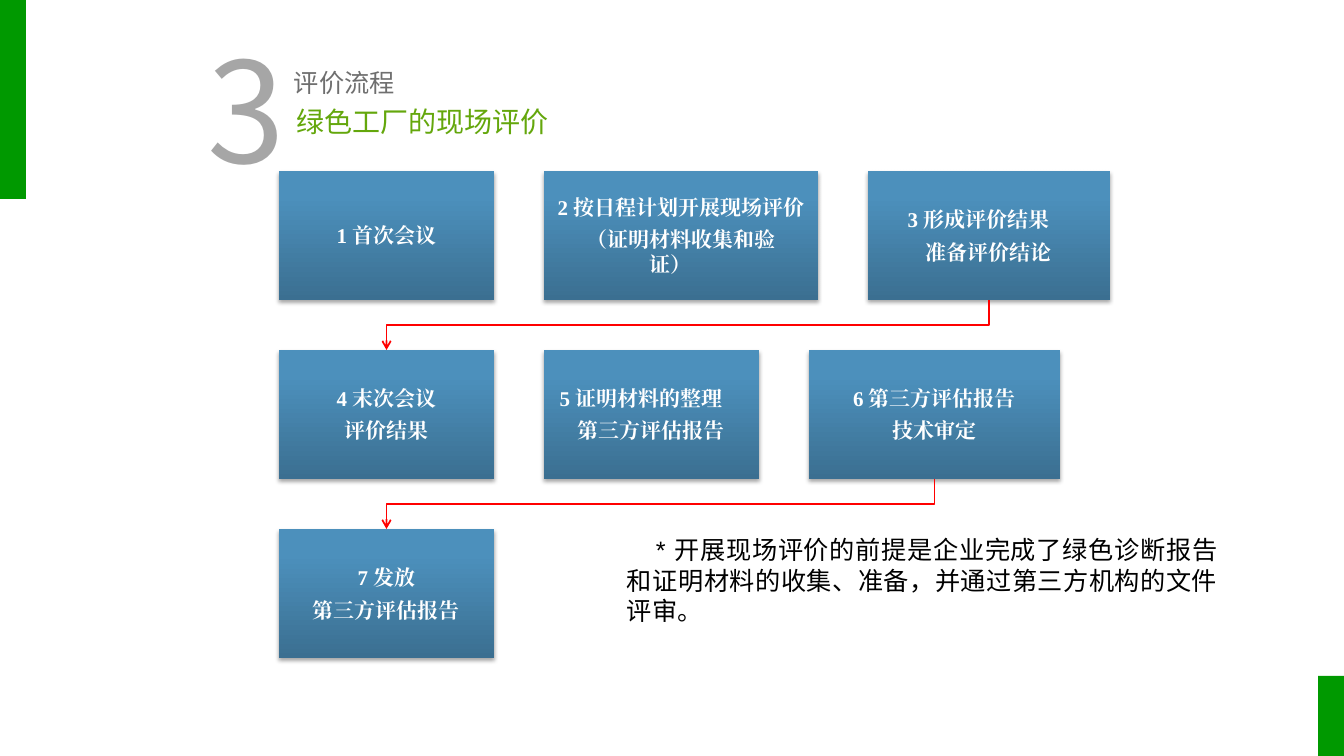
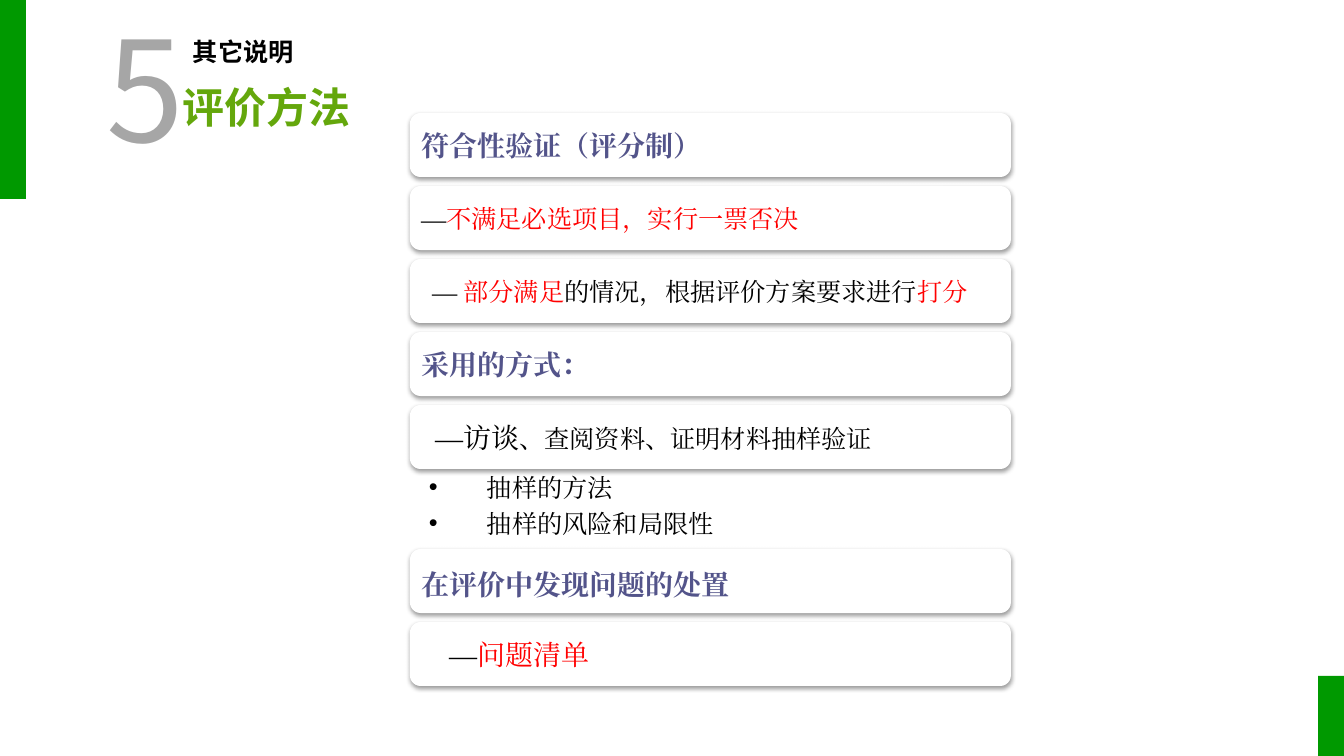
from itertools import count

from lxml.etree import SubElement
from pptx import Presentation
from pptx.dml.color import RGBColor
from pptx.enum.shapes import MSO_CONNECTOR, MSO_SHAPE
from pptx.enum.text import MSO_ANCHOR, MSO_AUTO_SIZE, PP_ALIGN
from pptx.oxml.ns import qn
from pptx.util import Pt

SCALE = 12192000 / 1344
COLORS = {
    "band": "009900", "title": "64A70C", "number": "A6A6A6", "caption": "6F6F6F",
    "black": "000000", "white": "FFFFFF", "red": "FF0000", "heading": "53548A",
    "step_dark": "3B6F91", "step_light": "4C90BC",
}
SANS, SERIF = "Noto Sans CJK SC", "Times New Roman"
STEP_TEXT = {"size": 15, "name": SERIF, "color": "white", "bold": True}
HEADING = {"size": 20, "name": SERIF, "color": "heading", "bold": True}
BODY = {"size": 18, "name": SERIF, "color": "black"}
BODY_RED = {**BODY, "color": "red"}
LARGE = {**BODY, "size": 20}
LARGE_RED = {**LARGE, "color": "red"}

STEP_ROWS = [
    [(215, ["1 首次会议"]),
     (274, ["2 按日程计划开展现场评价", "（证明材料收集和验证）　"]),
     (242, ["3 形成评价结果　", "准备评价结论"])],
    [(215, ["4 末次会议", "评价结果"]),
     (215, ["5 证明材料的整理　", "第三方评估报告"]),
     (251, ["6 第三方评估报告", "技术审定"])],
    [(215, ["7 发放", "第三方评估报告"])],
]
METHOD_CARDS = [
    ([("符合性验证（评分制）", HEADING)], {}),
    ([("—", BODY), ("不满足必选项目，实行一票否决", BODY_RED)], {}),
    ([("— ", BODY), ("部分满足", BODY_RED),
      ("的情况，根据评价方案要求进行", BODY), ("打分", BODY_RED)], {"margin": 11}),
    ([("采用的方式：", HEADING)], {}),
    ([("—访谈", LARGE), ("、查阅资料、证明材料抽样验证", BODY)], {"margin": 14}),
]
SAMPLING_POINTS = ["抽样的方法", "抽样的风险和局限性"]
PROBLEM_CARDS = [
    ([("在评价中发现问题的处置", HEADING)], {"line_spacing": 1.2}),
    ([("—", LARGE), ("问题清单", LARGE_RED)], {"margin": 28}),
]


def px(value):
    return round(value * SCALE)


def color(name):
    return RGBColor.from_string(COLORS[name])


def style_span(span, style):
    values = {**style, "size": Pt(style["size"])}
    span.font.color.rgb = color(values.pop("color"))
    for key, value in values.items():
        setattr(span.font, key, value)


def write_text(box, paragraphs, inset=(0, 0, 0, 0), anchor=MSO_ANCHOR.MIDDLE,
               wrap=True, bullet=None, margin=0, indent=0, **layout):
    frame = box.text_frame
    sides = zip(("left", "top", "right", "bottom"), inset)
    settings = {f"margin_{side}": px(value) for side, value in sides}
    settings.update(auto_size=MSO_AUTO_SIZE.NONE, word_wrap=wrap, vertical_anchor=anchor)
    for key, value in settings.items():
        setattr(frame, key, value)
    for number, spans in enumerate(paragraphs):
        para = frame.add_paragraph() if number else frame.paragraphs[0]
        properties = para._p.get_or_add_pPr()
        if margin or indent:
            properties.set("marL", str(px(margin)))
            properties.set("indent", str(px(indent)))
        if bullet:
            SubElement(properties, qn("a:buFont"), typeface="Arial")
            SubElement(properties, qn("a:buChar"), char=bullet)
        for key, value in {"alignment": PP_ALIGN.LEFT, **layout}.items():
            setattr(para, key, value)
        for text, style in spans:
            span = para.add_run()
            span.text = text
            style_span(span, style)
    for latin in list(box.element.iter(qn("a:latin"))):
        east_asian = SubElement(latin.getparent(), qn("a:ea"), typeface=latin.get("typeface"))
        latin.addnext(east_asian)


def add_text(page, area, paragraphs, **layout):
    box = page.shapes.add_textbox(*map(px, area))
    write_text(box, paragraphs, **layout)
    return box


def add_panel(page, preset, area):
    panel = page.shapes.add_shape(preset, *map(px, area))
    panel.shadow.inherit = False
    panel.line.fill.background()
    return panel


def add_shadow(panel, opacity, distance):
    effects = panel.element.spPr.find(qn("a:effectLst"))
    shadow = SubElement(effects, qn("a:outerShdw"), blurRad=str(Pt(3.1)),
                        dist=str(Pt(distance)), dir="5400000", rotWithShape="0")
    tone = SubElement(shadow, qn("a:srgbClr"), val=COLORS["black"])
    SubElement(tone, qn("a:alpha"), val=str(opacity * 1000))


def add_layout_bands(layout, page):
    identifiers = count(100)
    for area in ((1318, 676, 26, 80), (0, 0, 26, 199)):
        band = add_panel(page, MSO_SHAPE.RECTANGLE, area)
        band.fill.solid()
        band.fill.fore_color.rgb = color("band")
        band.element.nvSpPr.cNvPr.id = next(identifiers)
        layout.shapes.element.insert(2, band.element)


def add_heading(page, number, number_at, caption, caption_at, caption_style,
                title, title_area, title_style):
    left, top = number_at
    add_text(page, (left, top, 80, 179),
             [[(number, {"size": 100, "name": SANS, "color": "number"})]],
             inset=(10, 0, 0, 0), wrap=False)
    add_text(page, (*caption_at, 203, 40),
             [[(caption, {"size": 18, "name": SANS, **caption_style})]],
             inset=(10, 5, 10, 5))
    heading = page.shapes.title
    for key, value in zip(("left", "top", "width", "height"), title_area):
        setattr(heading, key, px(value))
    write_text(heading, [[(title, {"name": SANS, "color": "title", **title_style})]])


def add_step(page, area, lines):
    step = add_panel(page, MSO_SHAPE.RECTANGLE, area)
    step.fill.gradient()
    step.fill.gradient_angle = 90
    stops = (("step_dark", 0), ("step_light", 0.8))
    for stop, (name, position) in zip(step.fill.gradient_stops, stops):
        stop.color.rgb = color(name)
        stop.position = position
    add_shadow(step, 35, 1.8)
    write_text(step, [[(line, STEP_TEXT)] for line in lines], inset=(12,) * 4,
               alignment=PP_ALIGN.CENTER, space_after=Pt(5))
    return step


def add_return_arrow(page, start, end):
    start_x, start_y = start.left + start.width // 2, start.top + start.height
    end_x, end_y = end.left + end.width // 2, end.top
    arrow = page.shapes.add_connector(MSO_CONNECTOR.ELBOW, start_x, start_y, end_x, end_y)
    arrow.begin_connect(start, 2)
    arrow.end_connect(end, 0)
    run, drop = start_x - end_x, end_y - start_y
    frame = {"left": (start_x + end_x - drop) // 2, "top": (start_y + end_y - run) // 2,
             "width": drop, "height": run}
    for key, value in frame.items():
        setattr(arrow, key, value)
    properties = arrow.element.spPr
    transform = properties.find(qn("a:xfrm"))
    for flip in ("flipH", "flipV"):
        transform.attrib.pop(flip, None)
    transform.set("rot", "5400000")
    arrow.line.color.rgb = color("red")
    arrow.line.width = Pt(1.25)
    SubElement(properties.find(qn("a:ln")), qn("a:tailEnd"), type="arrow")
    SubElement(properties, qn("a:effectLst"))


def add_step_flow(page, left, top, height=129, gap=50):
    previous = None
    for number, row in enumerate(STEP_ROWS):
        step_left = left
        steps = []
        for width, lines in row:
            area = (step_left, top + number * (height + gap), width, height)
            steps.append(add_step(page, area, lines))
            step_left += width + gap
        if previous:
            add_return_arrow(page, previous, steps[0])
        previous = steps[-1]


def add_cards(page, left, top, width, cards, height=64, pitch=73):
    for number, (spans, layout) in enumerate(cards):
        area = (left, top + number * pitch, width, height)
        card = add_panel(page, MSO_SHAPE.ROUNDED_RECTANGLE, area)
        card.fill.solid()
        card.fill.fore_color.rgb = color("white")
        add_shadow(card, 38, 1.6)
        write_text(card, [spans], inset=(8,) * 4, **layout)


def build_process_page(page):
    add_heading(page, "3", (198, 18), "评价流程", (284, 62), {"color": "caption"},
                "绿色工厂的现场评价", (296, 101, 521, 40), {"size": 20})
    add_step_flow(page, 279, 171)
    note = "* 开展现场评价的前提是企业完成了绿色诊断报告和证明材料的收集、准备，并通过第三方机构的文件评审。"
    add_text(page, (617, 529, 611, 102),
             [[(note, {"size": 18, "name": "Arial", "color": "black"})]],
             inset=(10, 5, 10, 5), indent=29, alignment=PP_ALIGN.JUSTIFY)


def build_method_page(page):
    add_heading(page, "5", (97, -3), "其它说明", (183, 31), {"color": "black", "bold": True},
                "评价方法", (183, 82, 191, 50), {"size": 30, "bold": True})
    left, width = 410, 601
    add_cards(page, left, 113, width, METHOD_CARDS)
    add_text(page, (left, 469, width, 80), [[(point, BODY)] for point in SAMPLING_POINTS],
             inset=(19, 3, 14, 3), anchor=MSO_ANCHOR.TOP, bullet="•",
             margin=58, indent=-58, space_after=Pt(4))
    add_cards(page, left, 549, width, PROBLEM_CARDS)


def main():
    deck = Presentation()
    deck.slide_width, deck.slide_height = px(1344), px(756)
    layout = deck.slide_layouts[5]
    pages = [deck.slides.add_slide(layout) for _ in range(2)]
    add_layout_bands(layout, pages[0])
    for build, page in zip((build_process_page, build_method_page), pages):
        build(page)
    deck.save("out.pptx")


if __name__ == "__main__":
    main()
